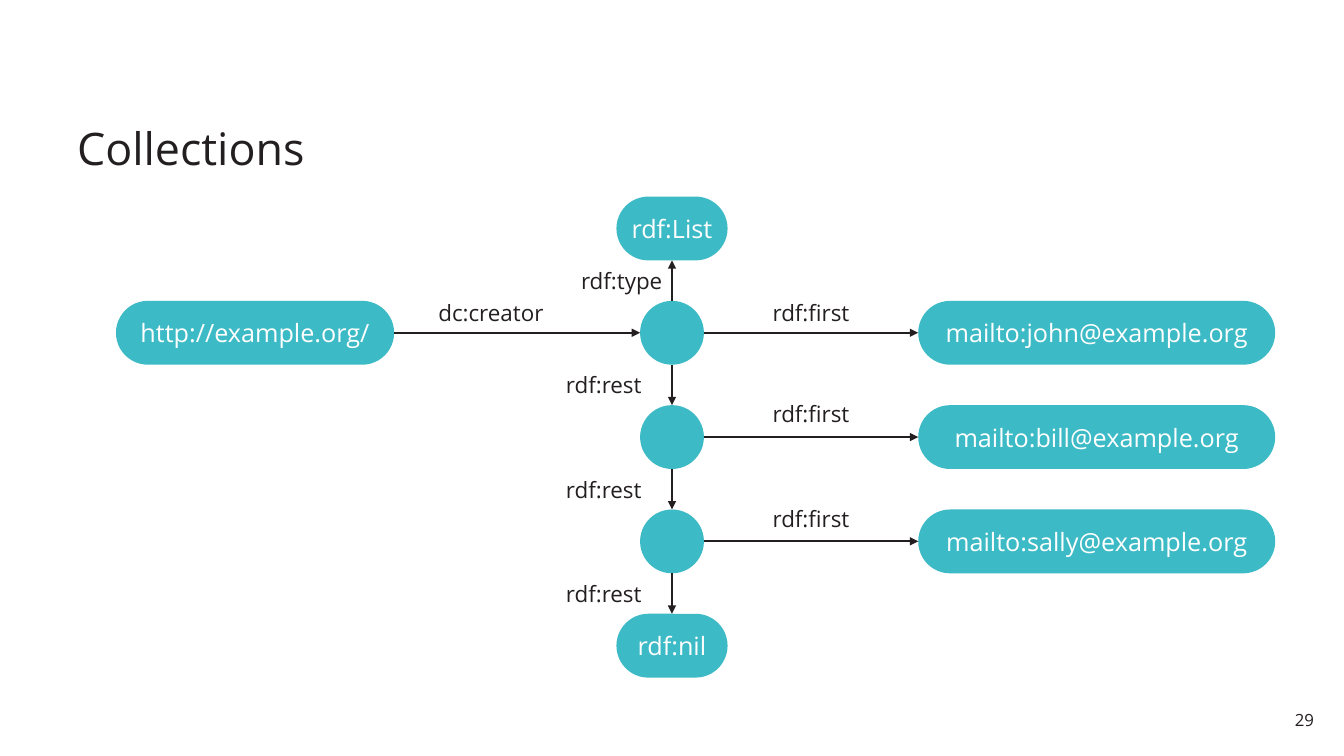
from lxml.etree import SubElement
from pptx import Presentation
from pptx.dml.color import RGBColor
from pptx.enum.shapes import MSO_CONNECTOR as CONN, MSO_SHAPE as SHAPE
from pptx.enum.text import MSO_ANCHOR as ANCHOR, MSO_AUTO_SIZE as AUTO, PP_ALIGN as ALIGN
from pptx.oxml.ns import qn
from pptx.util import Pt

COLORS = {"ink": "231F20", "node": "3CBAC6", "white": "FFFFFF"}
FONT = "Open Sans"
TITLE = "Collections"
PAGE_NUMBER = "29"

ROW_TOP, ROW_PITCH = 163.2, 74.5  # middle of the first row, step to the next
NODE_H = 45.6
LABEL_H = 26.6

# name: (text, centre x, row, width); blank nodes are circles
NODES = {
    "page": ("http://example.org/", 182.2, 1, 198.7),
    "List": ("rdf:List", 480, 0, 79.4),
    "blank1": ("", 480, 1, NODE_H),
    "blank2": ("", 480, 2, NODE_H),
    "blank3": ("", 480, 3, NODE_H),
    "nil": ("rdf:nil", 480, 4, 79.4),
    "john": ("mailto:john@example.org", 783.4, 1, 255),
    "bill": ("mailto:bill@example.org", 783.4, 2, 255),
    "sally": ("mailto:sally@example.org", 783.4, 3, 255),
}
TOP, LEFT, BOTTOM, RIGHT = range(4)
# from, side, to, side
ARROWS = [
    ("page", RIGHT, "blank1", LEFT),
    ("blank1", TOP, "List", BOTTOM),
    ("blank1", BOTTOM, "blank2", TOP),
    ("blank2", BOTTOM, "blank3", TOP),
    ("blank3", BOTTOM, "nil", TOP),
    ("blank1", RIGHT, "john", LEFT),
    ("blank2", RIGHT, "bill", LEFT),
    ("blank3", RIGHT, "sally", LEFT),
]
# text, left, width, row (halves lie between rows), shift up, alignment
LABELS = [
    ("rdf:type", 403.9, 76.3, 0.5, 0, ALIGN.RIGHT),
    ("dc:creator", 301.7, 93.6, 1, 14.2, ALIGN.RIGHT),
    ("rdf:first", 542.2, 74.2, 1, 14.2, ALIGN.CENTER),
    ("rdf:first", 542.2, 74.2, 2, 16.5, ALIGN.CENTER),
    ("rdf:first", 542.2, 74.2, 3, 16.5, ALIGN.CENTER),
    ("rdf:rest", 395.3, 72, 1.5, 0, ALIGN.CENTER),
    ("rdf:rest", 395.3, 72, 2.5, 0, ALIGN.CENTER),
    ("rdf:rest", 395.3, 72, 3.5, 0, ALIGN.CENTER),
]


def rgb(name):
    return RGBColor.from_string(COLORS[name])


def row_y(row):
    return ROW_TOP + row * ROW_PITCH


def write(sp, text, size, color, align, **frame):
    """Put one formatted line in a shape; frame holds text frame settings."""
    tf = sp.text_frame
    for key, value in frame.items():
        setattr(tf, key, value)
    p = tf.paragraphs[0]
    p.alignment = align
    r = p.add_run()
    r.text = text
    for key, value in {"name": FONT, "size": Pt(size)}.items():
        setattr(r.font, key, value)
    r.font.color.rgb = rgb(color)
    return p


def add_node(s, text, x, row, width):
    kind = SHAPE.ROUNDED_RECTANGLE if text else SHAPE.OVAL
    sp = s.shapes.add_shape(kind, Pt(x - width / 2), Pt(row_y(row) - NODE_H / 2),
                            Pt(width), Pt(NODE_H))
    sp.shadow.inherit = False
    sp.fill.solid()
    sp.fill.fore_color.rgb = rgb("node")
    sp.line.fill.background()
    if text:
        sp.adjustments[0] = 0.5
        write(sp, text, 18, "white", ALIGN.CENTER,
              word_wrap=False, vertical_anchor=ANCHOR.MIDDLE)
    return sp


def side_point(sp, side):
    dx, dy = {TOP: (0.5, 0), LEFT: (0, 0.5), BOTTOM: (0.5, 1), RIGHT: (1, 0.5)}[side]
    return int(sp.left + dx * sp.width), int(sp.top + dy * sp.height)


def add_arrow(s, start, start_side, end, end_side):
    line = s.shapes.add_connector(CONN.STRAIGHT, *side_point(start, start_side),
                                  *side_point(end, end_side))
    # a circle numbers its connection sites differently, so only pills are joined
    if start.text_frame.text:
        line.begin_connect(start, start_side)
    if end.text_frame.text:
        line.end_connect(end, end_side)
    line.line.width = Pt(1.5)
    line.line.color.rgb = rgb("ink")
    SubElement(line.line._get_or_add_ln(), qn("a:tailEnd"), type="triangle")
    SubElement(line._element.spPr, qn("a:effectLst"))


def add_label(s, text, left, width, row, up, align):
    sp = s.shapes.add_textbox(Pt(left), Pt(row_y(row) - up - LABEL_H / 2),
                              Pt(width), Pt(LABEL_H))
    write(sp, text, 16, "ink", align, word_wrap=False,
          auto_size=AUTO.SHAPE_TO_FIT_TEXT, vertical_anchor=ANCHOR.MIDDLE)


def main():
    prs = Presentation()
    prs.slide_width, prs.slide_height = Pt(960), Pt(540)
    s = prs.slides.add_slide(prs.slide_layouts[5])

    title = s.shapes.title
    title.left, title.top, title.width, title.height = Pt(49), Pt(54.7), Pt(861.8), Pt(73.4)
    p = write(title, TITLE, 32, "ink", ALIGN.LEFT, word_wrap=True,
              auto_size=AUTO.NONE, vertical_anchor=ANCHOR.BOTTOM,
              margin_left=Pt(6), margin_right=Pt(6),
              margin_top=Pt(3), margin_bottom=Pt(3))
    p.line_spacing = 0.9

    nodes = {name: add_node(s, *node) for name, node in NODES.items()}
    for start, start_side, end, end_side in ARROWS:
        add_arrow(s, nodes[start], start_side, nodes[end], end_side)
    for label in LABELS:
        add_label(s, *label)

    number = s.shapes.add_textbox(Pt(910.8), Pt(502.6), Pt(33.8), Pt(22.3))
    write(number, PAGE_NUMBER, 12, "ink", ALIGN.RIGHT, word_wrap=True,
          margin_left=Pt(6), margin_right=Pt(6),
          margin_top=Pt(4.3), margin_bottom=Pt(4.3))
    prs.save("out.pptx")


if __name__ == "__main__":
    main()
